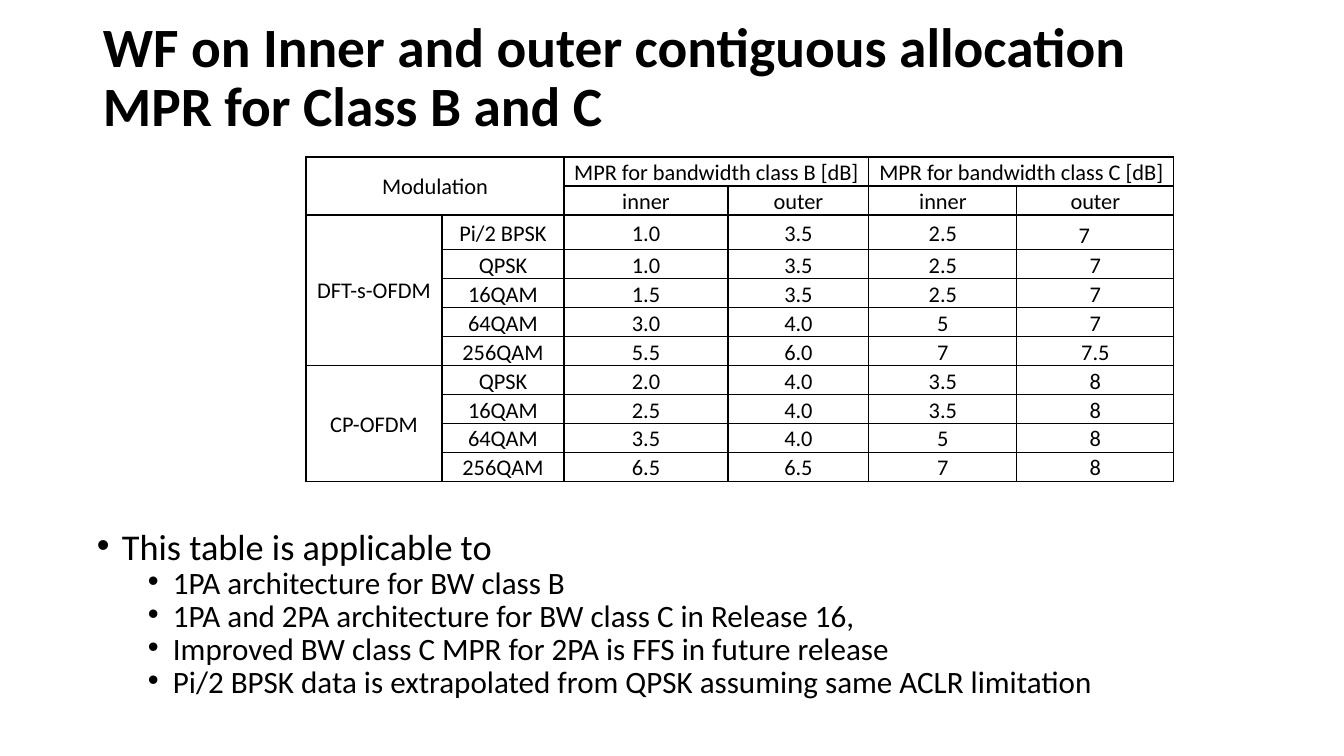
from lxml import etree
from pptx import Presentation
from pptx.dml.color import RGBColor
from pptx.enum.text import MSO_ANCHOR, PP_ALIGN
from pptx.oxml.ns import qn
from pptx.util import Pt

LEFT, CENTER = PP_ALIGN.LEFT, PP_ALIGN.CENTER
TOP, MIDDLE = MSO_ANCHOR.TOP, MSO_ANCHOR.MIDDLE
SCALE = 914400 / 100.8
COLORS = {"ink": "000000"}

TITLE = "WF on Inner and outer contiguous allocation MPR for Class B and C"
LEAD = "This table is applicable to"
POINTS = [
    "1PA architecture for BW class B",
    "1PA and 2PA architecture for BW class C in Release 16,",
    "Improved BW class C MPR for 2PA is FFS in future release",
    "Pi/2 BPSK data is extrapolated from QPSK assuming same ACLR limitation",
]
COLS = [136, 122, 164, 141, 148, 157]
ROWS = [
    ["Modulation", "", "MPR for bandwidth class B [dB]", "",
     "MPR for bandwidth class C [dB]", ""],
    ["", "", "inner", "outer", "inner", "outer"],
    ["DFT-s-OFDM", "Pi/2 BPSK", "1.0", "3.5", "2.5", "7　"],
    ["", "QPSK", "1.0", "3.5", "2.5", "7"],
    ["", "16QAM", "1.5", "3.5", "2.5", "7"],
    ["", "64QAM", "3.0", "4.0", "5", "7"],
    ["", "256QAM", "5.5", "6.0", "7", "7.5"],
    ["CP-OFDM", "QPSK", "2.0", "4.0", "3.5", "8"],
    ["", "16QAM", "2.5", "4.0", "3.5", "8"],
    ["", "64QAM", "3.5", "4.0", "5", "8"],
    ["", "256QAM", "6.5", "6.5", "7", "8"],
]
HEIGHTS = [29, 29, 35] + [29] * 8
SPANS = [(0, 0, 1, 1), (0, 2, 0, 3), (0, 4, 0, 5), (2, 0, 6, 0), (7, 0, 10, 0)]


def px(n):
    return round(n * SCALE)


def write(par, text, size, bold=False, align=LEFT, line=1.0, before=0,
          level=0, indent=None, font="Calibri", color="ink"):
    par.level = level
    par.alignment = align
    par.line_spacing = line
    par.space_before = Pt(before)
    if indent is not None:
        props = par._p.get_or_add_pPr()
        props.set("marL", str(px(indent)))
        props.set("indent", str(-px(25)))
        etree.SubElement(props, qn("a:buFont"), typeface="Arial")
        etree.SubElement(props, qn("a:buChar"), char="•")
    run = par.add_run()
    run.text = text
    run.font.name = font
    run.font.size = Pt(size)
    run.font.bold = bold
    run.font.color.rgb = RGBColor.from_string(COLORS[color])


class Deck:
    def __init__(self):
        self.show = Presentation()
        self.show.slide_width, self.show.slide_height = px(1344), px(756)
        self.slide = self.show.slides.add_slide(self.show.slide_layouts[6])

    def box(self, x, y, w, h, items, anchor=TOP):
        shape = self.slide.shapes.add_textbox(px(x), px(y), px(w), px(h))
        frame = shape.text_frame
        frame.word_wrap = True
        frame.vertical_anchor = anchor
        for i, (text, style) in enumerate(items):
            par = frame.add_paragraph() if i else frame.paragraphs[0]
            write(par, text, **style)

    def border(self, cell, color="ink"):
        props = cell._tc.get_or_add_tcPr()
        for side in ("lnL", "lnR", "lnT", "lnB"):
            line = etree.SubElement(props, qn("a:" + side), w=str(Pt(1)))
            fill = etree.SubElement(line, qn("a:solidFill"))
            etree.SubElement(fill, qn("a:srgbClr"), val=COLORS[color])

    def table(self, x, y, cols, heights, rows, spans):
        frame = self.slide.shapes.add_table(
            len(rows), len(cols), px(x), px(y), px(sum(cols)), px(sum(heights)))
        grid = frame.table
        grid.first_row = grid.horz_banding = False
        for col, wide in zip(grid.columns, cols):
            col.width = px(wide)
        for r, (row, high) in enumerate(zip(rows, heights)):
            grid.rows[r].height = px(high)
            for c, text in enumerate(row):
                cell = grid.cell(r, c)
                cell.margin_left = cell.margin_right = px(7)
                cell.margin_top = cell.margin_bottom = 0
                cell.vertical_anchor = MIDDLE
                self.border(cell)
                cell.fill.background()
                if text:
                    write(cell.text_frame.paragraphs[0], text, size=16,
                          align=CENTER, line=1.07)
        for top, left, end, right in spans:
            grid.cell(top, left).merge(grid.cell(end, right))


def main():
    deck = Deck()
    deck.box(93, 40, 1159, 78, [(TITLE, dict(size=39.6, bold=True, line=0.9))],
             anchor=MIDDLE)
    lead = dict(size=25.9, line=0.7, indent=25)
    point = dict(size=22.2, line=0.7, before=5, level=1, indent=76)
    deck.box(87, 531, 1159, 184, [(LEAD, lead)] + [(t, point) for t in POINTS])
    deck.table(306, 157, COLS, HEIGHTS, ROWS, SPANS)
    deck.show.save("out.pptx")


if __name__ == "__main__":
    main()
